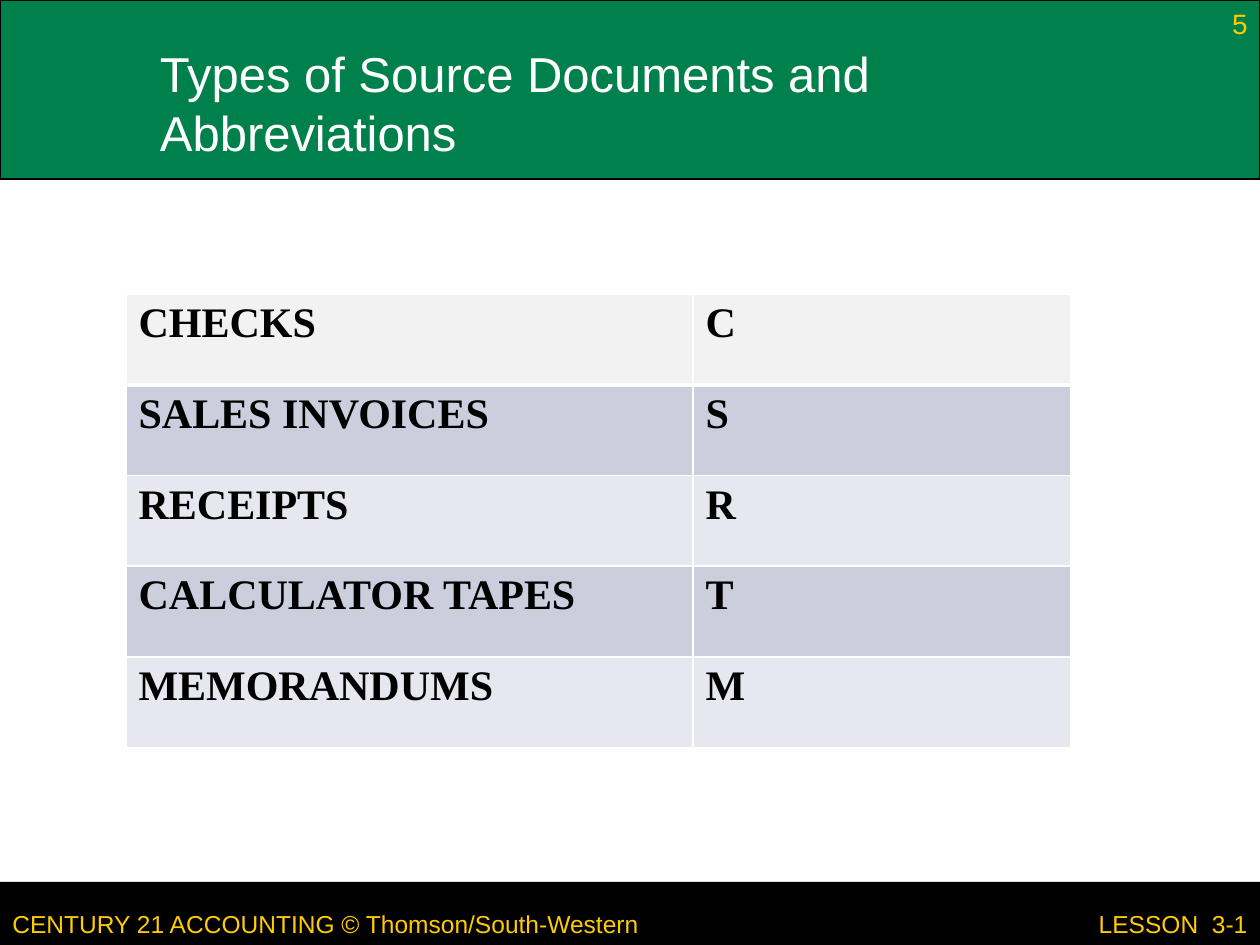
from lxml import etree
from pptx import Presentation
from pptx.dml.color import RGBColor
from pptx.enum import shapes, text
from pptx.oxml import ns
from pptx.util import Cm, Pt

GREEN = RGBColor(0x00, 0x80, 0x4B)
GOLD = RGBColor(0xFF, 0xCC, 0x00)
BLACK = RGBColor(0x00, 0x00, 0x00)
WHITE = RGBColor(0xFF, 0xFF, 0xFF)
HEAD_GREY = RGBColor(0xF2, 0xF2, 0xF2)
BAND_DARK = RGBColor(0xCC, 0xCE, 0xDE)
BAND_LIGHT = RGBColor(0xE7, 0xE8, 0xEF)

SLIDE_WIDTH, SLIDE_HEIGHT = Cm(25.4), Cm(19.05)
LEFT, RIGHT = text.PP_ALIGN.LEFT, text.PP_ALIGN.RIGHT
TOP, BOTTOM = text.MSO_ANCHOR.TOP, text.MSO_ANCHOR.BOTTOM

DOCUMENTS = [
    ("CHECKS", "C"),
    ("SALES INVOICES", "S"),
    ("RECEIPTS", "R"),
    ("CALCULATOR TAPES", "T"),
    ("MEMORANDUMS", "M"),
]


def write(frame, words, size, color, font="Arial", align=LEFT, anchor=TOP, bold=False):
    frame.word_wrap = True
    frame.vertical_anchor = anchor
    paragraph = frame.paragraphs[0]
    paragraph.alignment = align
    run = paragraph.add_run()
    run.text = words
    run.font.name = font
    run.font.size = Pt(size)
    run.font.bold = bold
    run.font.color.rgb = color


def add_bar(slide, box, color):
    bar = slide.shapes.add_shape(shapes.MSO_SHAPE.RECTANGLE, *box)
    bar.shadow.inherit = False
    bar.fill.solid()
    bar.fill.fore_color.rgb = color
    bar.line.fill.background()
    # Bars lie behind the title placeholder
    slide.shapes._spTree.insert(2, bar._element)
    return bar


def add_label(slide, box, words, size, align=LEFT, anchor=TOP):
    label = slide.shapes.add_textbox(*box)
    write(label.text_frame, words, size, GOLD, align=align, anchor=anchor)


def add_header(slide, left, top, width, height):
    band = add_bar(slide, (left, top, width, height), GREEN)
    band.line.color.rgb = BLACK
    band.line.width = Pt(0.75)

    # Title
    title = slide.shapes.title
    title.left, title.top = left + Cm(2.97), top + Cm(0.2)
    title.width, title.height = Cm(20.73), height - Cm(0.43)
    title.fill.solid()
    title.fill.fore_color.rgb = GREEN
    title.text_frame.auto_size = text.MSO_AUTO_SIZE.NONE
    write(title.text_frame, "Types of Source Documents and Abbreviations",
          28, WHITE, anchor=BOTTOM)

    # Page number
    number_width = Cm(5.28)
    add_label(slide, (left + width - number_width, top, number_width, Cm(1.27)),
              "5", 16, align=RIGHT)


def add_footer(slide, left, top, width, height):
    add_bar(slide, (left, top, width, height), BLACK)
    label_top, label_height = top + Cm(0.25), height - Cm(0.25)
    credit_width, lesson_width = Cm(15.88), Cm(7.62)
    add_label(slide, (left, label_top, credit_width, label_height),
              "CENTURY 21 ACCOUNTING © Thomson/South-Western", 14, anchor=BOTTOM)
    add_label(slide, (left + width - lesson_width, label_top, lesson_width, label_height),
              "LESSON  3-1", 14, align=RIGHT, anchor=BOTTOM)


def set_borders(cell, widths):
    properties = cell._tc.get_or_add_tcPr()
    for side, width in widths.items():
        border = etree.SubElement(properties, ns.qn(f"a:ln{side}"), w=str(Pt(width)))
        fill = etree.SubElement(border, ns.qn("a:solidFill"))
        etree.SubElement(fill, ns.qn("a:srgbClr"), val=str(WHITE))


def add_documents(slide, left, top, width, height):
    table = slide.shapes.add_table(len(DOCUMENTS), 2, left, top, width, height).table
    table.columns[0].width = int(width * 0.6)
    table.columns[1].width = int(width * 0.4)
    for r, document in enumerate(DOCUMENTS):
        if r == 0:
            color = HEAD_GREY
        else:
            color = BAND_DARK if r % 2 else BAND_LIGHT
        for c, words in enumerate(document):
            cell = table.cell(r, c)
            # A thicker rule divides the first row from the rest
            set_borders(cell, {"L": 1, "R": 1, "T": 3 if r == 1 else 1,
                               "B": 3 if r == 0 else 1})
            cell.fill.solid()
            cell.fill.fore_color.rgb = color
            write(cell.text_frame, words, 24, BLACK, font="Times New Roman", bold=True)


def main():
    deck = Presentation()
    deck.slide_width, deck.slide_height = SLIDE_WIDTH, SLIDE_HEIGHT
    slide = deck.slides.add_slide(deck.slide_layouts[5])
    footer_height = Cm(1.27)
    add_header(slide, 0, 0, SLIDE_WIDTH, Cm(3.61))
    add_footer(slide, 0, SLIDE_HEIGHT - footer_height, SLIDE_WIDTH, footer_height)
    add_documents(slide, Cm(2.54), Cm(5.93), Cm(19.05), Cm(9.14))
    deck.save("out.pptx")


if __name__ == "__main__":
    main()
